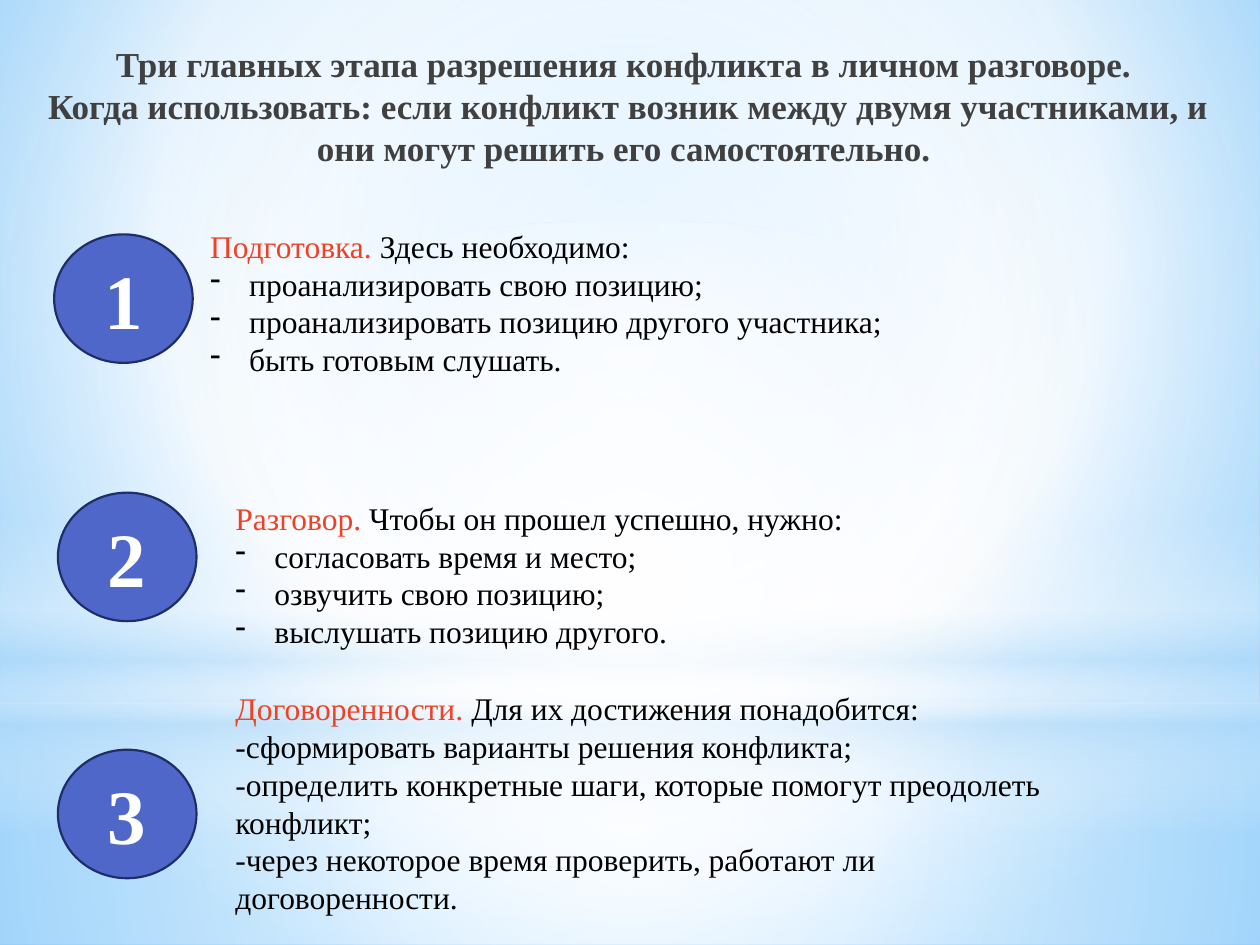
from lxml.etree import SubElement
from pptx import Presentation
from pptx.dml.color import RGBColor
from pptx.enum.shapes import MSO_SHAPE as Shape
from pptx.enum.text import MSO_ANCHOR as Anchor, PP_ALIGN as Align
from pptx.oxml.ns import qn
from pptx.util import Inches, Pt

FONT = "Times New Roman"
GREY, BLACK, WHITE, RED = "404040", "000000", "FFFFFF", "F14124"
BLUE, NAVY, PALE = "4E67C8", "1F2E69", "B4DCFA"

TITLE = [
    "Три главных этапа разрешения конфликта в личном разговоре. ",
    "Когда использовать: если конфликт возник между двумя участниками, "
    "и они могут решить его самостоятельно. ",
]
# circle place, text box, bulleted, heading, lead, points
STEPS = [
    ((0.43, 1.86), (1.57, 1.75, 8, 1.31), True,
     "Подготовка. ", "Здесь необходимо:",
     ["проанализировать свою позицию;",
      "проанализировать позицию другого участника;",
      "быть готовым слушать."]),
    ((0.46, 3.91), (1.77, 3.91, 7.48, 1.31), True,
     "Разговор. ", "Чтобы он прошел успешно, нужно:",
     ["согласовать время и место;",
      "озвучить свою позицию;",
      "выслушать позицию другого."]),
    ((0.46, 5.95), (1.77, 5.42, 7.07, 1.92), False,
     "Договоренности. ", "Для их достижения понадобится:",
     ["-сформировать варианты решения конфликта;",
      "-определить конкретные шаги, которые помогут преодолеть конфликт;",
      "-через некоторое время проверить, работают ли договоренности."]),
]
CIRCLE = (1.1, 1.02)

MID = (50, 50, 50, 50)
# stops are (position, colour, opacity); focus None means top to bottom
SKY = [(0, "9ED5FF", 100), (60, WHITE, 100), (100, "5BB9FF", 100)]
GLOWS = [
    (Shape.RECTANGLE, (0, 5.58, 10, 1.92), MID,
     [(0, WHITE, 91), (37, WHITE, 76), (100, PALE, 79)]),
    (Shape.RECTANGLE, (0, 0, 10, 5.58), MID,
     [(0, WHITE, 89), (48, WHITE, 62), (100, PALE, 79)]),
    (Shape.RECTANGLE, (0, 4.12, 10, 2.5), None,
     [(0, WHITE, 0), (29, WHITE, 30), (45, PALE, 40),
      (55, WHITE, 26), (65, PALE, 60), (100, WHITE, 0)]),
    (Shape.OVAL, (0, 1.75, 10, 5.58), MID,
     [(0, WHITE, 100), (56, WHITE, 0)]),
]


def color(code):
    return RGBColor.from_string(code)


def shade(owner, fill, stops, focus):
    """Give the owner's fill a gradient with opacity at each stop."""
    fill.gradient()
    grad = owner.element.find(".//" + qn("a:gradFill"))
    for child in list(grad):
        grad.remove(child)
    group = SubElement(grad, qn("a:gsLst"))
    for pos, code, alpha in stops:
        stop = SubElement(group, qn("a:gs"), pos=str(pos * 1000))
        tint = SubElement(stop, qn("a:srgbClr"), val=code)
        if alpha < 100:
            SubElement(tint, qn("a:alpha"), val=str(alpha * 1000))
    if focus:
        path = SubElement(grad, qn("a:path"), {"path": "circle"})
        sides = {k: str(v * 1000) for k, v in zip("ltrb", focus)}
        SubElement(path, qn("a:fillToRect"), sides)
    else:
        SubElement(grad, qn("a:lin"), ang="5400000", scaled="0")


def add_form(slide, kind, box):
    form = slide.shapes.add_shape(kind, *map(Inches, box))
    form.shadow.inherit = False
    return form


def add_box(slide, box):
    frame = slide.shapes.add_textbox(*map(Inches, box)).text_frame
    frame.word_wrap = True
    return frame


def style(para, size, codes, bold=False, align=Align.LEFT):
    """Format a paragraph and its runs, one colour for each run."""
    para.alignment = align
    para.line_spacing = Pt(size * 1.2)
    for run, code in zip(para.runs, codes):
        font = run.font
        font.name, font.size, font.bold = FONT, Pt(size), bold
        font.color.rgb = color(code)


def add_dash(para):
    props = para._p.get_or_add_pPr()
    indent = Inches(0.31)
    props.set("marL", str(indent))
    props.set("indent", str(-indent))
    SubElement(props, qn("a:buFontTx"))
    SubElement(props, qn("a:buChar"), char="-")


def add_title(slide):
    para = add_box(slide, (0.2, 0.29, 9.57, 1.25)).paragraphs[0]
    para.add_run().text = TITLE[0]
    para.add_line_break()
    para.add_run().text = TITLE[1]
    style(para, 20, [GREY] * 2, True, Align.CENTER)


def add_circle(slide, place, number):
    disc = add_form(slide, Shape.OVAL, place + CIRCLE)
    disc.fill.solid()
    disc.fill.fore_color.rgb = color(BLUE)
    disc.line.color.rgb = color(NAVY)
    disc.line.width = Pt(1.25)
    frame = disc.text_frame
    frame.text = str(number)
    frame.vertical_anchor = Anchor.MIDDLE
    style(frame.paragraphs[0], 44, [WHITE], True, Align.CENTER)


def add_step(slide, box, dashed, head, lead, points):
    frame = add_box(slide, box)
    first = frame.paragraphs[0]
    for part in (head, lead):
        first.add_run().text = part
    style(first, 18, [RED, BLACK])
    for point in points:
        para = frame.add_paragraph()
        para.text = point
        style(para, 18, [BLACK])
        if dashed:
            add_dash(para)


def main():
    deck = Presentation()
    deck.slide_width, deck.slide_height = Inches(10), Inches(7.5)
    slide = deck.slides.add_slide(deck.slide_layouts[6])
    shade(slide, slide.background.fill, SKY, (20, 10, 20, 60))
    for kind, box, focus, stops in GLOWS:
        glow = add_form(slide, kind, box)
        glow.line.fill.background()
        shade(glow, glow.fill, stops, focus)
    add_title(slide)
    for number, (place, *_) in enumerate(STEPS, 1):
        add_circle(slide, place, number)
    for _, *step in STEPS:
        add_step(slide, *step)
    deck.save("out.pptx")


if __name__ == "__main__":
    main()
